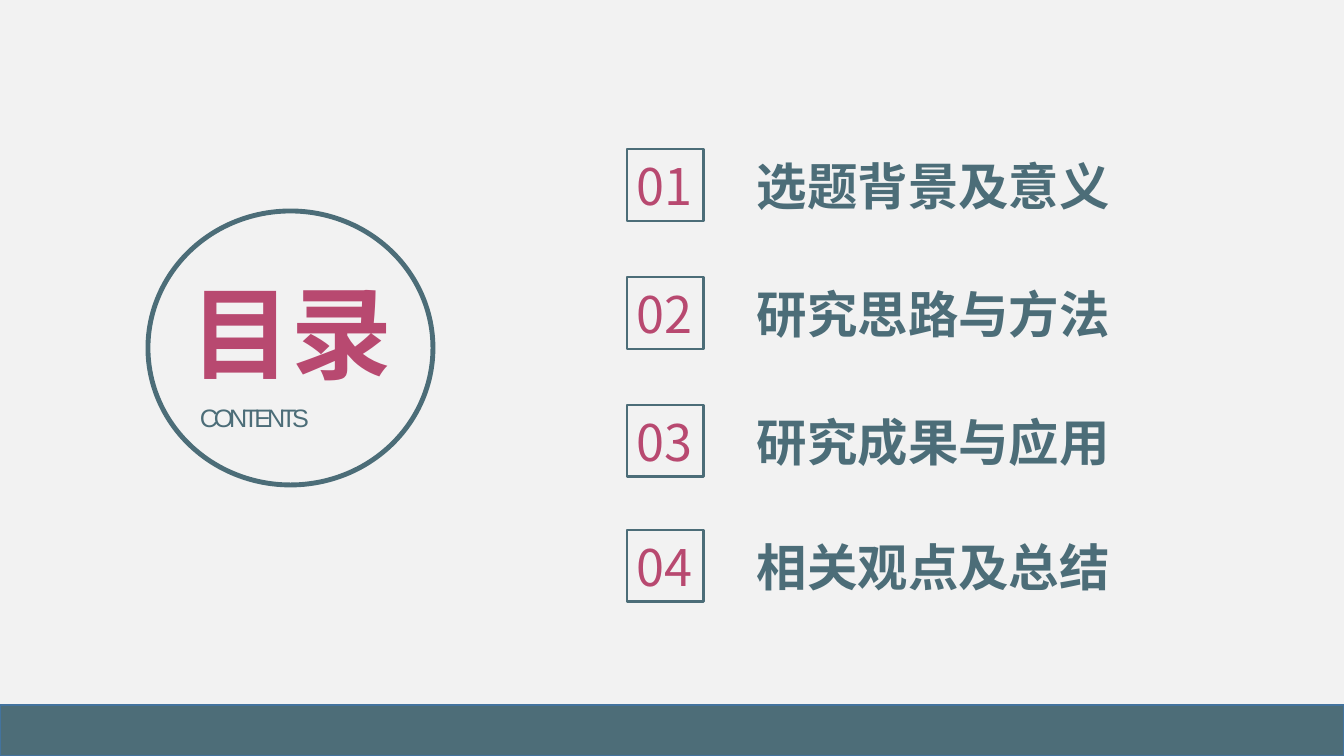
from lxml.etree import SubElement
from pptx import Presentation
from pptx.dml.color import RGBColor
from pptx.enum.shapes import MSO_SHAPE as Preset
from pptx.enum.text import MSO_ANCHOR as Anchor, PP_ALIGN as Align
from pptx.oxml.ns import qn
from pptx.util import Pt

EMU_PER_PX = 914400 / 100.8
CJK_FONT = "Noto Sans CJK SC"
TEAL, ROSE = "4C6D78", "B84970"
CHAPTERS = [
    (149, "01", "选题背景及意义"),
    (277, "02", "研究思路与方法"),
    (405, "03", "研究成果与应用"),
    (530, "04", "相关观点及总结"),
]


def px(length):
    """Turn pixels into EMU."""
    return round(length * EMU_PER_PX)


def color(value):
    """Turn a hex string into a colour."""
    return RGBColor.from_string(value)


def add_outline(slide, preset, box, line, width, fill=None):
    """Add a preset shape with a line and an optional fill."""
    shape = slide.shapes.add_shape(preset, *map(px, box))
    shape.shadow.inherit = False
    if fill:
        shape.fill.solid()
        shape.fill.fore_color.rgb = color(fill)
    else:
        shape.fill.background()
    shape.line.color.rgb = color(line)
    shape.line.width = Pt(width)
    return shape


def write(shape, text, size, ink, bold=False, name=CJK_FONT, wrap=False,
          align=Align.LEFT, spacing=None):
    """Write one styled paragraph into a shape."""
    frame = shape.text_frame
    frame.word_wrap = wrap
    frame.vertical_anchor = Anchor.MIDDLE
    paragraph = frame.paragraphs[0]
    paragraph.text = text
    paragraph.alignment = align
    font = paragraph.runs[0].font
    font.name, font.size, font.bold = name, Pt(size), bold
    font.color.rgb = color(ink)
    properties = paragraph.runs[0]._r.get_or_add_rPr()
    SubElement(properties, qn("a:ea")).set("typeface", name)
    if spacing:
        properties.set("spc", str(spacing * 100))


def add_text(slide, box, *args, **style):
    """Add a text box with one styled paragraph."""
    write(slide.shapes.add_textbox(*map(px, box)), *args, **style)


def add_heading(slide, left, top, width, height):
    """Draw the ring with the heading and its subtitle."""
    add_outline(slide, Preset.OVAL, (left, top, width, height), TEAL, 3.5)
    add_text(slide, (left + 33, top + 54, 224, 132), "目录", 72, ROSE, bold=True)
    add_text(slide, (left + 42, top + 186, 205, 40), "CONTENTS", 18, TEAL,
             name="Arial", wrap=True, align=Align.JUSTIFY, spacing=-3)


def add_chapter(slide, left, top, height, number, title):
    """Draw a numbered box and the chapter title beside it."""
    square = add_outline(slide, Preset.RECTANGLE, (left, top, 77, height), TEAL, 2)
    write(square, number, 36, ROSE)
    add_text(slide, (left + 120, top, 374, height), title, 36, TEAL, bold=True)


def main():
    """Build and save the contents slide."""
    presentation = Presentation()
    presentation.slide_width, presentation.slide_height = px(1344), px(756)
    slide = presentation.slides.add_slide(presentation.slide_layouts[6])
    slide.background.fill.solid()
    slide.background.fill.fore_color.rgb = color("F2F2F2")
    add_heading(slide, 148, 211, 285, 274)
    for top, number, title in CHAPTERS:
        add_chapter(slide, 627, top, 72, number, title)
    add_outline(slide, Preset.RECTANGLE, (0, 705, 1344, 51), "43739E", 1, "4D6D78")
    presentation.save("out.pptx")


if __name__ == "__main__":
    main()
